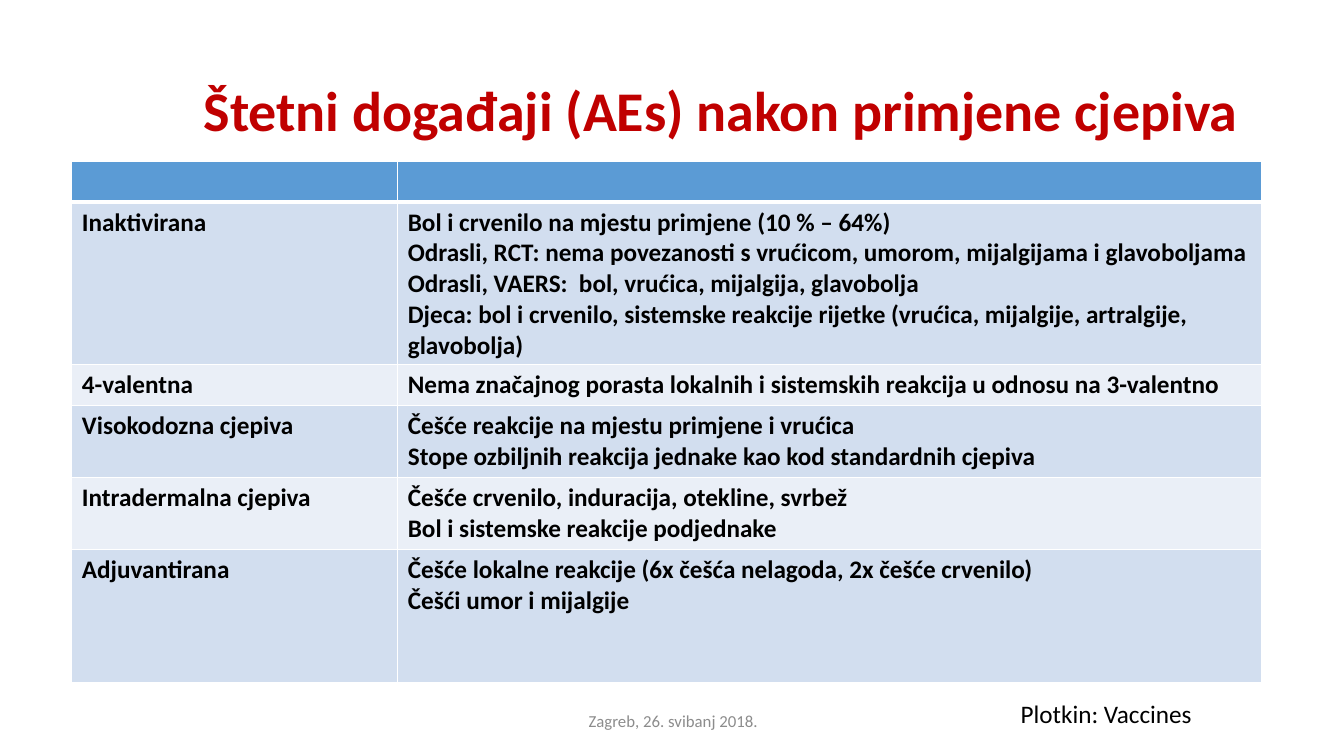
from dataclasses import dataclass

from lxml import etree
from pptx import Presentation
from pptx.dml.color import RGBColor
from pptx.enum.text import MSO_ANCHOR, PP_ALIGN
from pptx.oxml.ns import qn
from pptx.util import Inches, Pt

LEFT, CENTER = PP_ALIGN.LEFT, PP_ALIGN.CENTER
TOP, MIDDLE = MSO_ANCHOR.TOP, MSO_ANCHOR.MIDDLE
WIDTH, HEIGHT = Inches(13.33), Inches(7.5)


@dataclass(frozen=True)
class Theme:
    font: str = "Calibri"
    title_color: str = "C00000"
    ink: str = "000000"
    muted: str = "8C8C8C"
    header: str = "5B9BD5"
    bands: tuple = ("D2DEEF", "EAEFF7")
    rule: str = "FFFFFF"
    title_size: int = 40
    body_size: int = 18
    footer_size: int = 12
    thin: int = 1
    thick: int = 3


class SlideBuilder:
    """Places elements by percentages of the slide's width and height."""

    def __init__(self, slide, theme):
        self.slide, self.theme = slide, theme

    def box(self, left, top, width, height):
        return (int(WIDTH * left / 100), int(HEIGHT * top / 100),
                int(WIDTH * width / 100), int(HEIGHT * height / 100))

    def add_lines(self, frame, lines, size, color, bold=False, align=LEFT, spacing=1.0):
        for index, line in enumerate(lines):
            paragraph = frame.paragraphs[0] if index == 0 else frame.add_paragraph()
            paragraph.alignment = align
            paragraph.line_spacing = spacing
            run = paragraph.add_run()
            run.text = line
            run.font.name = self.theme.font
            run.font.size = Pt(size)
            run.font.bold = bold
            run.font.color.rgb = RGBColor.from_string(color)

    def text(self, area, line, size, color, anchor=TOP, indent=0.1, **style):
        frame = self.slide.shapes.add_textbox(*self.box(*area)).text_frame
        frame.word_wrap = True
        frame.vertical_anchor = anchor
        frame.margin_left = Inches(indent)
        self.add_lines(frame, [line], size, color, **style)

    def borders(self, cell, bottom, top):
        props = cell._tc.get_or_add_tcPr()
        widths = {"a:lnL": self.theme.thin, "a:lnR": self.theme.thin,
                  "a:lnT": top, "a:lnB": bottom}
        for position, (tag, width) in enumerate(widths.items()):
            line = etree.Element(qn(tag), w=str(int(Pt(width))))
            fill = etree.SubElement(line, qn("a:solidFill"))
            etree.SubElement(fill, qn("a:srgbClr"), val=self.theme.rule)
            props.insert(position, line)

    def table(self, area, column_shares, row_shares, rows):
        theme = self.theme
        left, top, width, height = self.box(*area)
        table = self.slide.shapes.add_table(
            len(rows), len(column_shares), left, top, width, height).table
        for column, share in zip(table.columns, column_shares):
            column.width = int(width * share / 100)
        for row, share in zip(table.rows, row_shares):
            row.height = int(height * share / 100)
        for r, row in enumerate(rows):
            color = theme.bands[(r - 1) % 2] if r else theme.header
            for c, lines in enumerate(row):
                cell = table.cell(r, c)
                cell.fill.solid()
                cell.fill.fore_color.rgb = RGBColor.from_string(color)
                self.borders(cell, bottom=theme.thin if r else theme.thick,
                             top=theme.thick if r == 1 else theme.thin)
                self.add_lines(cell.text_frame, lines, theme.body_size, theme.ink, bold=True)


ADVERSE_EVENTS = [
    ([], []),
    (["Inaktivirana"], [
        "Bol i crvenilo na mjestu primjene (10 % – 64%)",
        "Odrasli, RCT: nema povezanosti s vrućicom, umorom, mijalgijama i glavoboljama",
        "Odrasli, VAERS:  bol, vrućica, mijalgija, glavobolja",
        "Djeca: bol i crvenilo, sistemske reakcije rijetke "
        "(vrućica, mijalgije, artralgije, glavobolja)"]),
    (["4-valentna"], [
        "Nema značajnog porasta lokalnih i sistemskih reakcija u odnosu na 3-valentno"]),
    (["Visokodozna cjepiva"], [
        "Češće reakcije na mjestu primjene i vrućica",
        "Stope ozbiljnih reakcija jednake kao kod standardnih cjepiva"]),
    (["Intradermalna cjepiva"], [
        "Češće crvenilo, induracija, otekline, svrbež",
        "Bol i sistemske reakcije podjednake"]),
    (["Adjuvantirana"], [
        "Češće lokalne reakcije (6x češća nelagoda, 2x češće crvenilo)",
        "Češći umor i mijalgije"]),
]


def main():
    deck = Presentation()
    deck.slide_width, deck.slide_height = WIDTH, HEIGHT
    theme = Theme()
    page = SlideBuilder(deck.slides.add_slide(deck.slide_layouts[6]), theme)

    # Title
    page.text((6.9, 5.3, 86.3, 19.3),
              "Štetni događaji (AEs) nakon primjene cjepiva",
              theme.title_size, theme.title_color, anchor=MIDDLE, indent=1.1,
              bold=True, spacing=0.9)

    # Adverse events by vaccine type
    page.table((5.35, 21.35, 88.5, 69), (27.4, 72.6),
               (7.8, 31.2, 7.8, 13.8, 13.8, 25.6), ADVERSE_EVENTS)

    # Footer and reference
    page.text((33.2, 92.7, 33.8, 5.3), "Zagreb, 26. svibanj 2018.",
              theme.footer_size, theme.muted, anchor=MIDDLE, align=CENTER)
    page.text((75.2, 91.7, 19.2, 5.3), "Plotkin: Vaccines",
              theme.body_size, theme.ink)

    deck.save("out.pptx")


if __name__ == "__main__":
    main()
